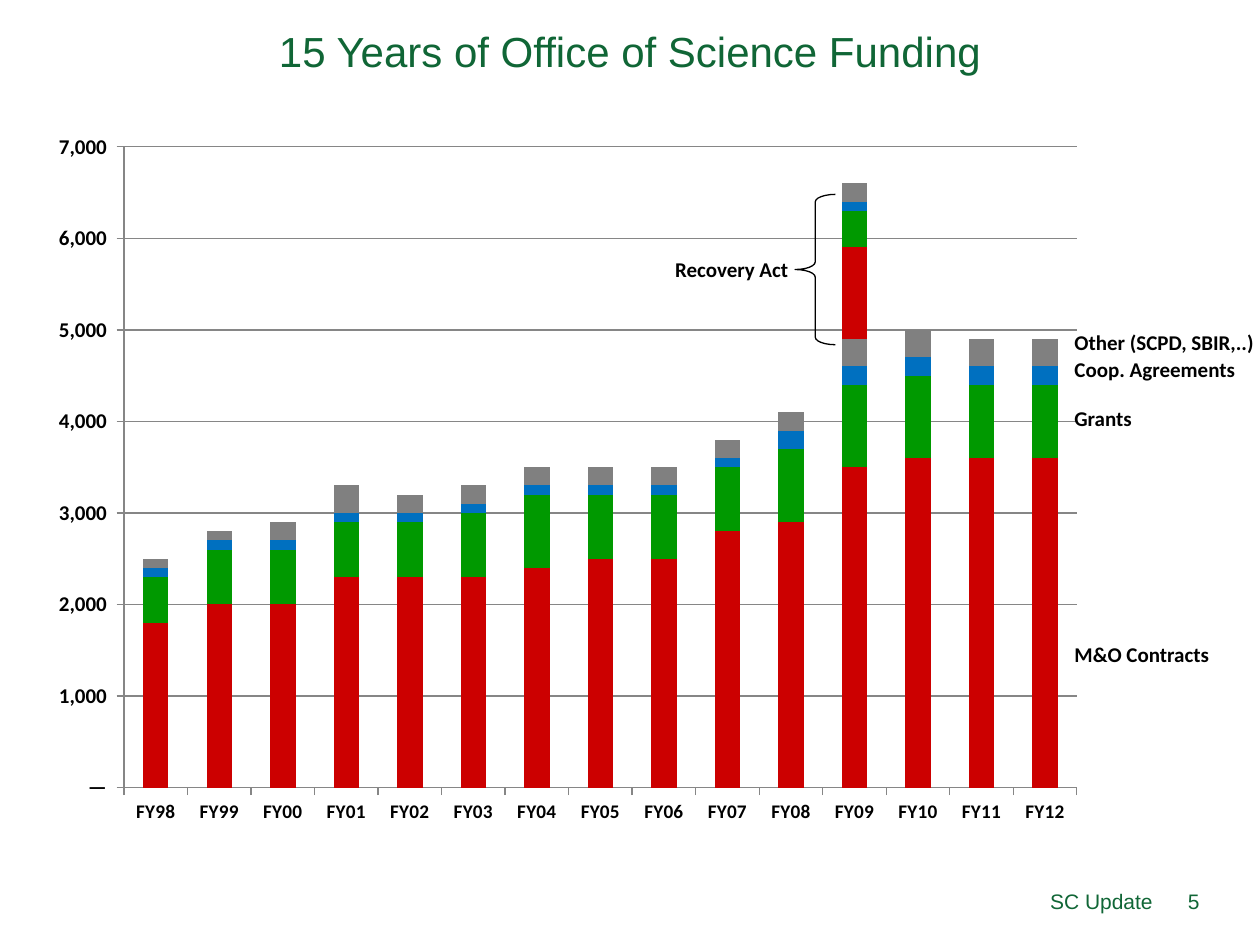
from lxml.etree import SubElement
from pptx import Presentation
from pptx.chart.data import CategoryChartData
from pptx.dml.color import RGBColor
from pptx.enum.chart import XL_CHART_TYPE, XL_TICK_MARK
from pptx.enum.shapes import MSO_SHAPE
from pptx.enum.text import MSO_ANCHOR, PP_ALIGN
from pptx.oxml.ns import qn
from pptx.util import Cm, Pt

COLORS = {
    "title": "106636",
    "text": "000000",
    "grid": "868686",
    "contracts": "CC0000",
    "grants": "009900",
    "agreements": "0070C0",
    "other": "808080",
}
SOURCES = ["contracts", "grants", "agreements", "other"]

# Hundreds of millions of dollars, in the order of SOURCES
BASE_FUNDING = {
    "FY98": (18, 5, 1, 1),
    "FY99": (20, 6, 1, 1),
    "FY00": (20, 6, 1, 2),
    "FY01": (23, 6, 1, 3),
    "FY02": (23, 6, 1, 2),
    "FY03": (23, 7, 1, 2),
    "FY04": (24, 8, 1, 2),
    "FY05": (25, 7, 1, 2),
    "FY06": (25, 7, 1, 2),
    "FY07": (28, 7, 1, 2),
    "FY08": (29, 8, 2, 2),
    "FY09": (35, 9, 2, 3),
    "FY10": (36, 9, 2, 3),
    "FY11": (36, 8, 2, 3),
    "FY12": (36, 8, 2, 3),
}
RECOVERY_ACT = {"FY09": (10, 4, 1, 2)}
NO_FUNDING = (0, 0, 0, 0)
CHART_UNIT = 100_000  # the chart counts in thousands of dollars


def rgb(name):
    return RGBColor.from_string(COLORS[name])


def add_text(slide, box, text, size, font, color, bold=False, align=PP_ALIGN.LEFT,
             anchor=MSO_ANCHOR.TOP, wrap=True, spacing=None):
    frame = slide.shapes.add_textbox(*map(Cm, box)).text_frame
    frame.word_wrap = wrap
    frame.vertical_anchor = anchor
    paragraph = frame.paragraphs[0]
    paragraph.text = text
    paragraph.alignment = align
    paragraph.line_spacing = spacing
    paragraph.font.size = Pt(size)
    paragraph.font.name = font
    paragraph.font.bold = bold
    paragraph.font.color.rgb = rgb(color)


def add_title(slide, box):
    add_text(slide, box, "15 Years of Office of Science Funding", 24, "Arial", "title",
             align=PP_ALIGN.CENTER, anchor=MSO_ANCHOR.MIDDLE, spacing=0.85)


def add_footer(slide, box):
    left, top, width, height = box
    number_width, overlap = 1.07, 0.13
    label_width = width - number_width + overlap
    number_left = left + width - number_width
    for text, x, w in (("SC Update", left, label_width), ("5", number_left, number_width)):
        add_text(slide, (x, top, w, height), text, 12, "Arial", "title",
                 align=PP_ALIGN.RIGHT, anchor=MSO_ANCHOR.MIDDLE)


def set_plot_layout(chart, **fractions):
    """Fix the inner plot area as fractions (x, y, w, h) of the chart."""
    plot_area = chart._chartSpace.chart.plotArea
    for old in plot_area.findall(qn("c:layout")):
        plot_area.remove(old)
    layout = SubElement(plot_area, qn("c:layout"))
    plot_area.insert(0, layout)
    manual = SubElement(layout, qn("c:manualLayout"))
    settings = {"layoutTarget": "inner", "xMode": "edge", "yMode": "edge", **fractions}
    for tag, value in settings.items():
        SubElement(manual, qn(f"c:{tag}")).set("val", str(value))


def style_axis(axis, size):
    axis.major_tick_mark = XL_TICK_MARK.OUTSIDE
    axis.minor_tick_mark = XL_TICK_MARK.NONE
    axis.format.line.color.rgb = rgb("grid")
    font = axis.tick_labels.font
    font.size = Pt(size)
    font.bold = True
    font.name = "Calibri"
    font.color.rgb = rgb("text")


def add_funding_chart(slide, box):
    data = CategoryChartData()
    data.categories = list(BASE_FUNDING)
    for prefix, funding in (("", BASE_FUNDING), ("Recovery Act ", RECOVERY_ACT)):
        for i, source in enumerate(SOURCES):
            values = [funding.get(year, NO_FUNDING)[i] * CHART_UNIT for year in BASE_FUNDING]
            data.add_series(prefix + source, values)

    chart = slide.shapes.add_chart(XL_CHART_TYPE.COLUMN_STACKED, *map(Cm, box), data).chart
    chart.has_legend = False
    chart.has_title = False
    chart.font.size = Pt(10)
    chart.font.name = "Calibri"
    chart.font.color.rgb = rgb("text")
    width, height = box[2:]
    set_plot_layout(chart, x=1.74 / width, y=0.52 / height, w=19.21 / width, h=12.92 / height)

    plot = chart.plots[0]
    plot.gap_width = 150
    plot.overlap = 100
    plot.vary_by_categories = False
    for series, source in zip(plot.series, SOURCES * 2):
        series.format.fill.solid()
        series.format.fill.fore_color.rgb = rgb(source)

    style_axis(chart.category_axis, 11)
    amounts = chart.value_axis
    style_axis(amounts, 12)
    amounts.minimum_scale = 0
    amounts.maximum_scale = 7_000_000
    amounts.major_unit = 1_000_000
    amounts.has_major_gridlines = True
    amounts.major_gridlines.format.line.color.rgb = rgb("grid")
    amounts.tick_labels.number_format = r"#,##0,_);\-#,##0,_);\—_)"
    amounts.tick_labels.number_format_is_linked = False


def add_chart_labels(slide, box):
    """Name the stacked parts beside the last column and bracket the Recovery Act."""
    left, top = box[:2]
    names_x = 20.65
    labels = [
        ("M&O Contracts", names_x, 10.36, 3.25, None),
        ("Grants", names_x, 5.61, 1.68, None),
        ("Coop. Agreements", names_x, 4.72, 3.99, 0.8),
        ("Other (SCPD, SBIR,..)", names_x, 4.18, 4.17, 0.8),
        ("Recovery Act", 12.6, 2.61, 2.82, None),
    ]
    for text, x, y, width, spacing in labels:
        height = 0.69 if spacing else 0.76
        add_text(slide, (left + x, top + y, width, height), text, 12, "Calibri", "text",
                 bold=True, wrap=False, spacing=spacing)

    brace = slide.shapes.add_shape(MSO_SHAPE.LEFT_BRACE, Cm(left + 15.27), Cm(top + 1.48),
                                   Cm(0.81), Cm(3.03))
    brace.adjustments[0] = 0.19
    brace.shadow.inherit = False
    brace.fill.background()
    brace.line.color.rgb = rgb("text")
    brace.line.width = Pt(0.75)


def main():
    presentation = Presentation()
    presentation.slide_width = Cm(25.4)
    presentation.slide_height = Cm(19.05)
    slide = presentation.slides.add_slide(presentation.slide_layouts[6])
    chart_box = (0.76, 2.44, 21.39, 14.48)
    add_title(slide, (0, 0.05, 25.4, 2.11))
    add_funding_chart(slide, chart_box)
    add_chart_labels(slide, chart_box)
    add_footer(slide, (8.69, 17.65, 15.74, 1.02))
    presentation.save("out.pptx")


if __name__ == "__main__":
    main()
